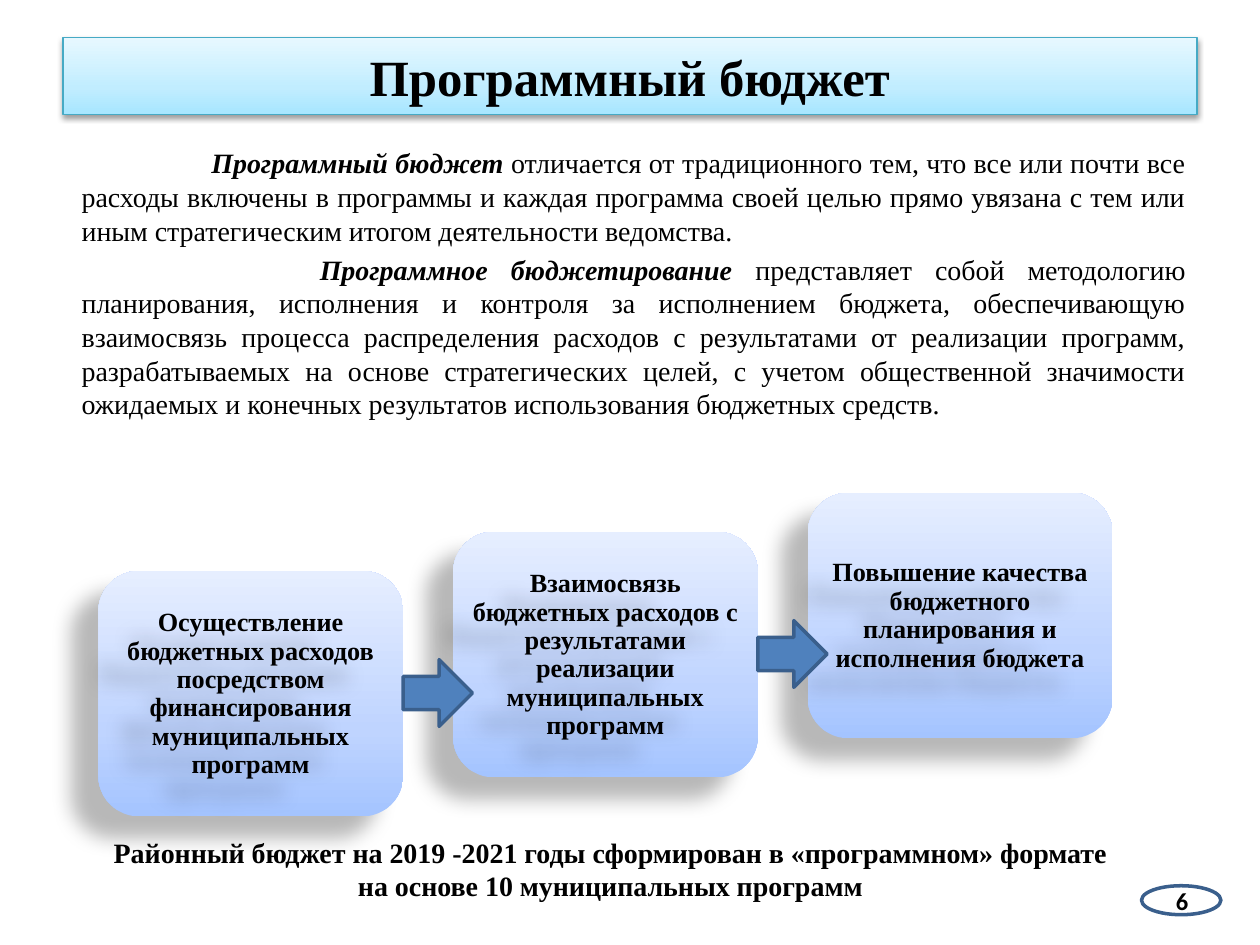
"""Build the slide about the programme budget."""
from dataclasses import dataclass

from lxml import etree
from pptx import Presentation
from pptx.dml.color import RGBColor
from pptx.enum.shapes import MSO_SHAPE
from pptx.enum.text import MSO_ANCHOR, PP_ALIGN
from pptx.oxml import parse_xml
from pptx.oxml.ns import nsdecls, qn
from pptx.util import Inches, Pt

CENTER, RIGHT, JUSTIFY = PP_ALIGN.CENTER, PP_ALIGN.RIGHT, PP_ALIGN.JUSTIFY
TOP, MIDDLE = MSO_ANCHOR.TOP, MSO_ANCHOR.MIDDLE
RECTANGLE, ROUNDED = MSO_SHAPE.RECTANGLE, MSO_SHAPE.ROUNDED_RECTANGLE
ELLIPSE, DOWN_ARROW = MSO_SHAPE.OVAL, MSO_SHAPE.DOWN_ARROW

BLACK = RGBColor(0x00, 0x00, 0x00)
WHITE = RGBColor(0xFF, 0xFF, 0xFF)
BLUE = RGBColor(0x4F, 0x81, 0xBD)
DARK_BLUE = RGBColor(0x3A, 0x5F, 0x8C)
TEAL = RGBColor(0x46, 0xAA, 0xC5)
STOPS = (0, 35, 100)
SKY = (RGBColor(0xA7, 0xE6, 0xFF), RGBColor(0xC1, 0xED, 0xFF), RGBColor(0xE7, 0xF8, 0xFF))
LAVENDER = (RGBColor(0xA4, 0xC4, 0xFF), RGBColor(0xBF, 0xD4, 0xFF), RGBColor(0xE6, 0xEE, 0xFF))

SERIF, SANS = "Times New Roman", "Calibri"
COLUMNS, ROWS = 100, 75
STEP_COLUMNS, STEP_ROWS = 28.15, -3.1


@dataclass(frozen=True)
class Box:
    """A place on the grid, in columns and rows."""

    left: float
    top: float
    width: float
    height: float

    def step(self, index: int) -> "Box":
        """Return the box moved up the staircase."""
        return Box(self.left + index * STEP_COLUMNS, self.top + index * STEP_ROWS, self.width, self.height)


@dataclass(frozen=True)
class Shadow:
    """An outer shadow: opacity in percent, lengths in points, angle in degrees."""

    opacity: int
    blur: float
    distance: float
    angle: int


@dataclass(frozen=True)
class Definition:
    """A term with its explanation and first-line indent in inches."""

    term: str
    explanation: str
    indent: float


TITLE_SHADOW = Shadow(38, 3.15, 1.57, 90)
CARD_SHADOW = Shadow(28, 11.8, 19.7, 141)
CARD = Box(7.8, 45.3, 24.2, 19.5)
CARD_TEXT = Box(8.6, 46.3, 22.6, 17.6)
ARROW = Box(32.1, 52.25, 5.3, 5.5)

DEFINITIONS = (
    Definition(
        "Программный бюджет ",
        "отличается от традиционного тем, что все или почти все расходы включены в программы "
        "и каждая программа своей целью прямо увязана с тем или иным стратегическим итогом "
        "деятельности ведомства.",
        1.03,
    ),
    Definition(
        "Программное бюджетирование ",
        "представляет собой методологию планирования, исполнения и контроля за исполнением бюджета, "
        "обеспечивающую взаимосвязь процесса распределения расходов с результатами от реализации "
        "программ, разрабатываемых на основе стратегических целей, с учетом общественной значимости "
        "ожидаемых и конечных результатов использования бюджетных средств.",
        1.89,
    ),
)
STAGES = (
    "Осуществление бюджетных расходов посредством финансирования муниципальных программ",
    "Взаимосвязь бюджетных расходов с результатами реализации муниципальных программ",
    "Повышение качества бюджетного планирования и исполнения бюджета",
)

presentation = Presentation()
presentation.slide_width, presentation.slide_height = Inches(10), Inches(7.5)
slide = presentation.slides.add_slide(presentation.slide_layouts[6])


def place(box: Box) -> tuple[int, int, int, int]:
    """Turn grid units into slide lengths."""
    column = presentation.slide_width / COLUMNS
    row = presentation.slide_height / ROWS
    return int(box.left * column), int(box.top * row), int(box.width * column), int(box.height * row)


def add_figure(kind: int, box: Box, fill: RGBColor | tuple, line: RGBColor | None = None, weight: float = 2):
    """Add a preset shape with a plain or gradient fill."""
    shape = slide.shapes.add_shape(kind, *place(box))
    shape.shadow.inherit = False
    if isinstance(fill, RGBColor):
        shape.fill.solid()
        shape.fill.fore_color.rgb = fill
    else:
        stops = "".join(
            f'<a:gs pos="{stop * 1000}"><a:srgbClr val="{color}"/></a:gs>' for stop, color in zip(STOPS, fill)
        )
        shape._element.spPr.find(qn("a:prstGeom")).addnext(parse_xml(
            f'<a:gradFill {nsdecls("a")}><a:gsLst>{stops}</a:gsLst><a:lin ang="16200000"/></a:gradFill>'
        ))
    if line is None:
        shape.line.fill.background()
    else:
        shape.line.color.rgb = line
        shape.line.width = Pt(weight)
    return shape


def cast_shadow(shape, shadow: Shadow) -> None:
    """Give the shape an outer shadow."""
    shape.shadow.inherit = False
    effects = shape._element.spPr.find(qn("a:effectLst"))
    outer = etree.SubElement(
        effects, qn("a:outerShdw"), blurRad=str(Pt(shadow.blur)), dist=str(Pt(shadow.distance)),
        dir=str(shadow.angle * 60000), rotWithShape="0",
    )
    color = etree.SubElement(outer, qn("a:srgbClr"), val=str(BLACK))
    etree.SubElement(color, qn("a:alpha"), val=str(shadow.opacity * 1000))


def style(paragraph, size: float, alignment: int = CENTER, bold: bool = True, name: str = SERIF) -> None:
    """Set the font and alignment of a paragraph."""
    font = paragraph.font
    font.name, font.size, font.bold = name, Pt(size), bold
    font.color.rgb = BLACK
    paragraph.alignment = alignment


def add_text_box(box: Box, anchor: int = TOP):
    """Add an empty wrapping text box."""
    shape = slide.shapes.add_textbox(*place(box))
    shape.text_frame.word_wrap = True
    shape.text_frame.vertical_anchor = anchor
    return shape


def write(shape, text: str, size: float, alignment: int = CENTER, name: str = SERIF):
    """Write one bold paragraph into a shape."""
    paragraph = shape.text_frame.paragraphs[0]
    paragraph.text = text
    style(paragraph, size, alignment, name=name)
    return paragraph


def add_definitions(box: Box) -> None:
    """Write the terms and their explanations."""
    frame = add_text_box(box).text_frame
    for index, definition in enumerate(DEFINITIONS):
        paragraph = frame.add_paragraph() if index else frame.paragraphs[0]
        style(paragraph, 16, JUSTIFY, bold=False)
        paragraph.space_before = Pt(3.2)
        properties = paragraph._p.get_or_add_pPr()
        properties.set("marL", str(Inches(0.38)))
        properties.set("indent", str(Inches(definition.indent)))
        term = paragraph.add_run()
        term.text = definition.term
        term.font.bold = term.font.italic = True
        paragraph.add_run().text = definition.explanation


def add_stage(index: int, text: str) -> None:
    """Add one card of the staircase with its text."""
    cast_shadow(add_figure(ROUNDED, CARD.step(index), LAVENDER), CARD_SHADOW)
    label = add_text_box(CARD_TEXT.step(index), MIDDLE)
    cast_shadow(label, CARD_SHADOW)
    frame = label.text_frame
    frame.margin_left = frame.margin_right = Inches(0.06)
    frame.margin_top = frame.margin_bottom = Inches(0.03)
    write(label, text, 15).line_spacing = 0.9


add_figure(ELLIPSE, Box(90.6, 70.3, 6.3, 2.3), WHITE, DARK_BLUE)
title = add_figure(RECTANGLE, Box(5, 3, 90, 6.1), SKY, TEAL, 0.75)
cast_shadow(title, TITLE_SHADOW)
write(title, "Программный бюджет", 29)
add_definitions(Box(1.7, 11.1, 93.4, 53.7))
write(add_text_box(Box(90.6, 69.5, 4.7, 4), MIDDLE), "6", 14, RIGHT, SANS)
for position, stage in enumerate(STAGES):
    add_stage(position, stage)
for position in range(len(STAGES) - 1):
    add_figure(DOWN_ARROW, ARROW.step(position), BLUE, DARK_BLUE).rotation = 270
write(
    add_text_box(Box(7.8, 65.8, 81.3, 6.4)),
    "Районный бюджет на 2019 -2021 годы сформирован в «программном» формате "
    "на основе 10 муниципальных программ",
    16,
)
presentation.save("out.pptx")
